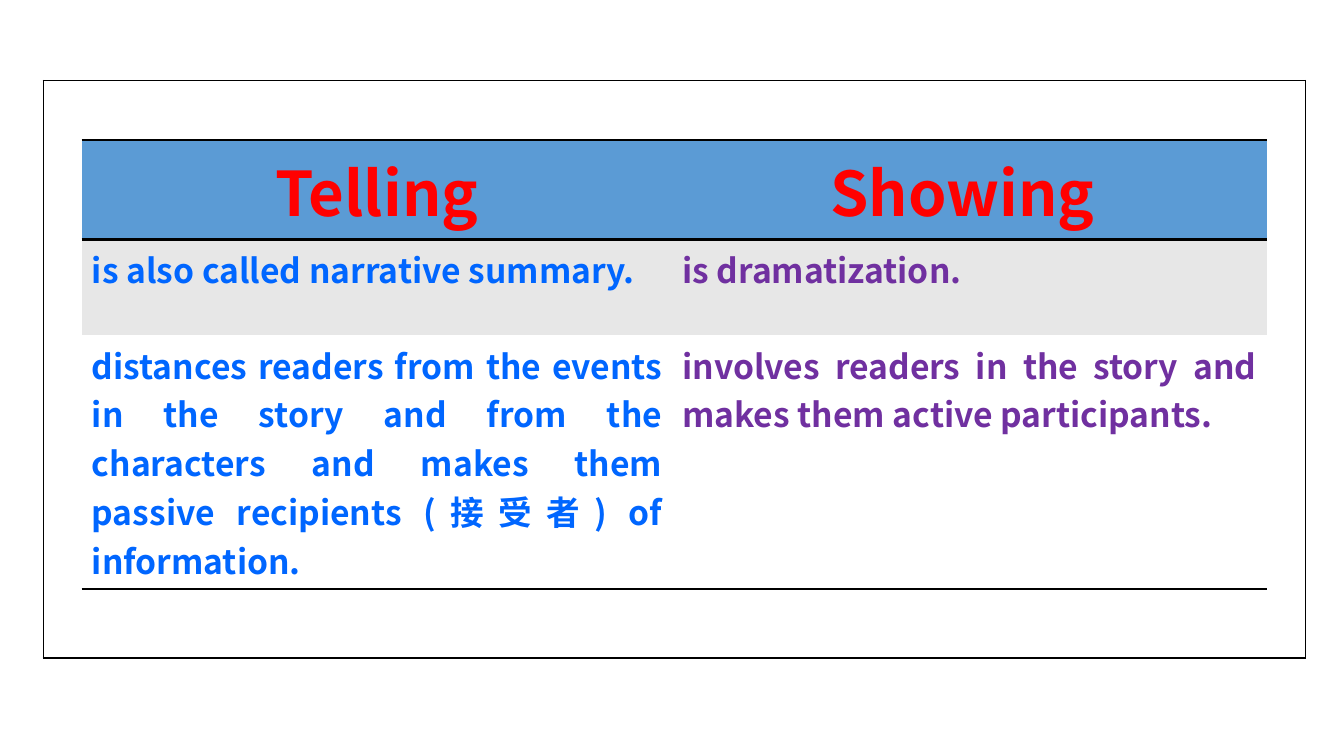
"""Build a slide that compares telling with showing in a framed table."""
from lxml import etree
from pptx import Presentation
from pptx import util as u
from pptx.dml.color import RGBColor
from pptx.enum import text
from pptx.oxml import ns

COLORS = {
    "black": "000000", "header": "5B9BD5", "band": "E7E7E7", "white": "FFFFFF",
    "red": "FF0000", "blue": "0066FF", "purple": "7030A0",
}
NO_STYLE = "{2D5ABB26-0587-4C30-8999-92F81FD0307C}"


class Deck:
    """Hold the style and the current slide."""

    def __init__(self, font):
        """Open a blank widescreen slide."""
        self.font = font
        self.prs = Presentation()
        self.prs.slide_width, self.prs.slide_height = u.Cm(33.87), u.Cm(19.05)
        self.slide = self.prs.slides.add_slide(self.prs.slide_layouts[6])

    def table(self, left, top, widths, heights):
        """Add an unstyled table with sizes in centimetres."""
        sp = self.slide.shapes.add_table(
            len(heights), len(widths), u.Cm(left), u.Cm(top),
            u.Cm(sum(widths)), u.Cm(sum(heights)))
        tbl = sp.table
        tbl.first_row = tbl.horz_banding = False
        tbl._tbl.tblPr.find(ns.qn("a:tableStyleId")).text = NO_STYLE
        for col, width in zip(tbl.columns, widths):
            col.width = u.Cm(width)
        for row, height in zip(tbl.rows, heights):
            row.height = u.Cm(height)
        return tbl

    def cell(self, cell, sides, width, fill=None):
        """Draw the named sides of a cell and fill it."""
        tc_pr = cell._tc.get_or_add_tcPr()
        for side in "LRTB":
            ln = etree.SubElement(tc_pr, ns.qn(f"a:ln{side}"))
            if side in sides:
                ln.set("w", str(u.Pt(width)))
                solid = etree.SubElement(ln, ns.qn("a:solidFill"))
                etree.SubElement(solid, ns.qn("a:srgbClr"), val=COLORS["black"])
            else:
                etree.SubElement(ln, ns.qn("a:noFill"))
        if fill:
            cell.fill.solid()
            cell.fill.fore_color.rgb = RGBColor.from_string(COLORS[fill])
        else:
            cell.fill.background()

    def label(self, cell, words, size, color, align):
        """Put one bold paragraph in a cell."""
        p = cell.text_frame.paragraphs[0]
        p.text, p.alignment = words, align
        p.font.name, p.font.size, p.font.bold = self.font, u.Pt(size), True
        p.font.color.rgb = RGBColor.from_string(COLORS[color])
        etree.SubElement(p._p.pPr.find(ns.qn("a:defRPr")), ns.qn("a:ea"),
                         typeface=self.font)


def main():
    """Build and save the slide."""
    deck = Deck("Noto Sans CJK SC")
    frame = deck.table(1.09, 2.03, [31.8], [14.55])
    deck.cell(frame.cell(0, 0), "LRTB", 1)

    center, justify = text.PP_ALIGN.CENTER, text.PP_ALIGN.JUSTIFY
    rows = [
        (("Telling", "Showing "), "TB", "header", 44, ("red", "red"), center),
        (("is also called narrative summary. ", "is dramatization. "),
         "T", "band", 24, ("blue", "purple"), justify),
        (("distances readers from the events in the story and from the "
          "characters and makes them passive recipients (接受者) of information. ",
          "involves readers in the story and makes them active participants."),
         "B", "white", 24, ("blue", "purple"), justify),
    ]
    comparison = deck.table(2.06, 3.53, [14.88, 14.98], [2.21, 2.41, 2.41])
    for i, (words, sides, fill, size, colors, align) in enumerate(rows):
        for j, (word, color) in enumerate(zip(words, colors)):
            cell = comparison.cell(i, j)
            deck.cell(cell, sides, 2, fill)
            deck.label(cell, word, size, color, align)
    deck.prs.save("out.pptx")


if __name__ == "__main__":
    main()
